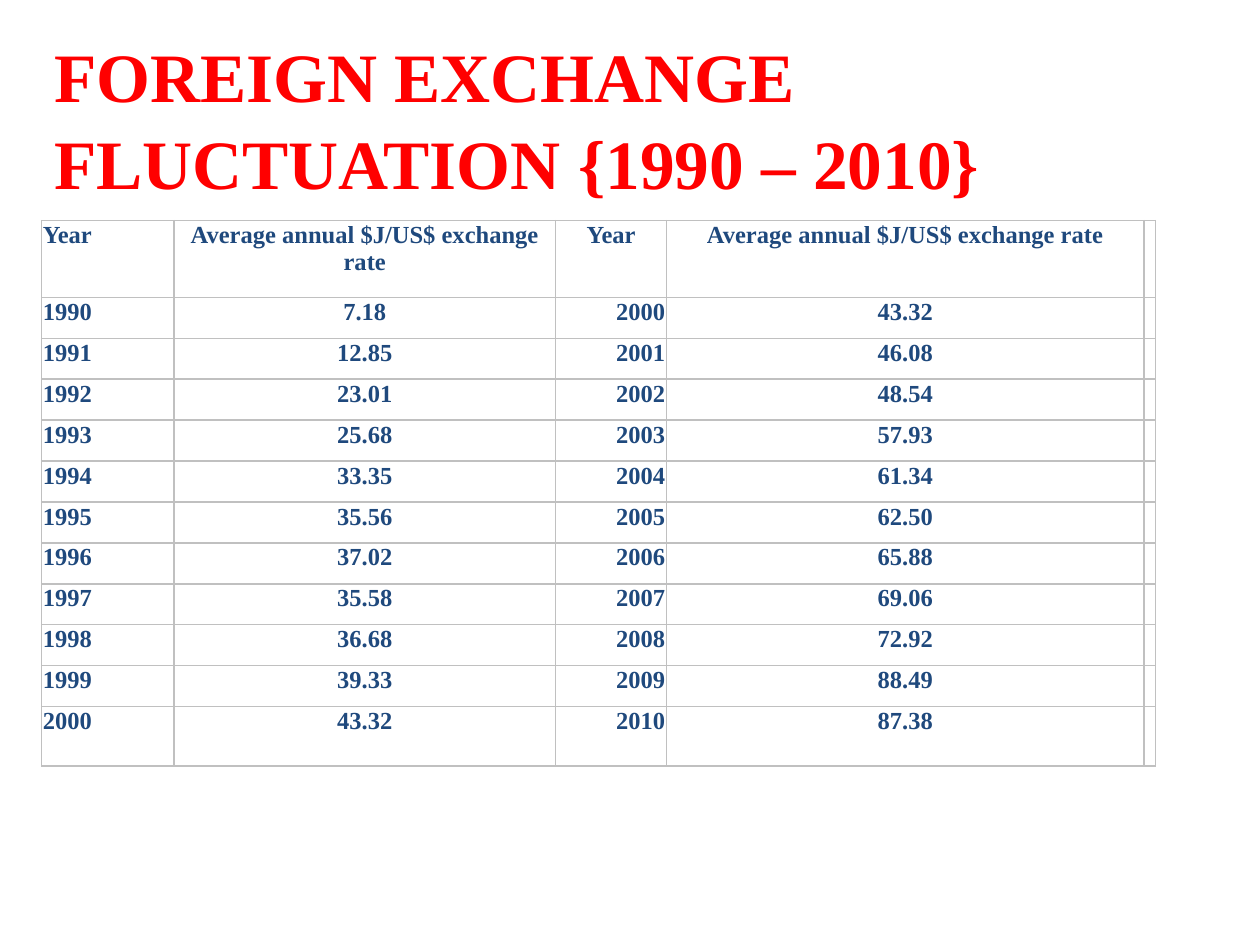
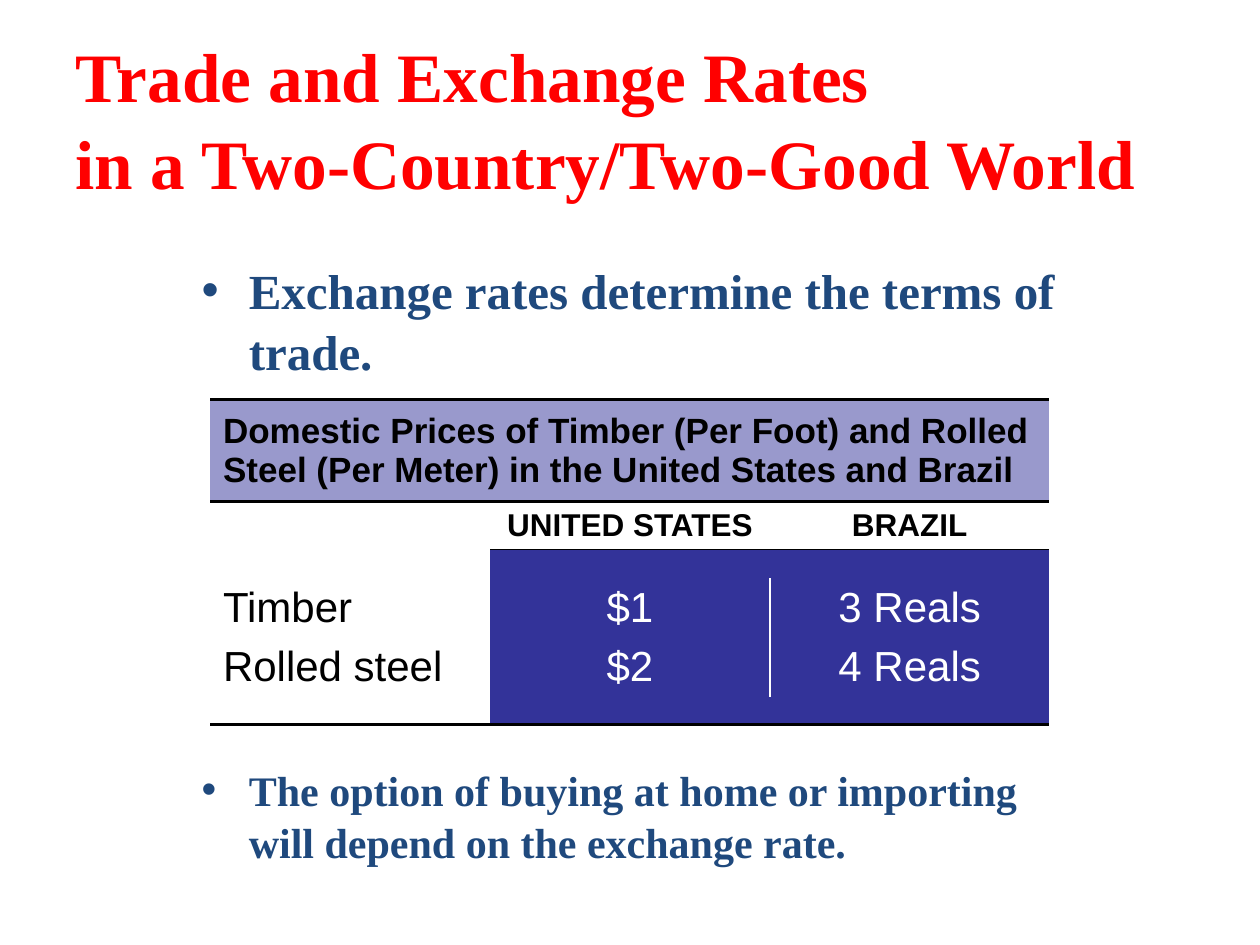
import lxml.etree
import pptx
import pptx.dml.color
import pptx.enum.text
import pptx.oxml.ns
import pptx.util

Inches = pptx.util.Inches
Pt = pptx.util.Pt
RGBColor = pptx.dml.color.RGBColor
Align = pptx.enum.text.PP_ALIGN
Anchor = pptx.enum.text.MSO_ANCHOR
qn = pptx.oxml.ns.qn

RED = RGBColor(0xFF, 0x00, 0x00)
NAVY = RGBColor(0x1F, 0x49, 0x7D)
GREY = RGBColor(0xC0, 0xC0, 0xC0)
BLACK = RGBColor(0x00, 0x00, 0x00)
WHITE = RGBColor(0xFF, 0xFF, 0xFF)
INDIGO = RGBColor(0x33, 0x33, 0x99)
LILAC = RGBColor(0x99, 0x99, 0xCC)
SERIF = "Times New Roman"
SANS = "Arial"
TITLE_ONLY, TWO_CONTENT = 5, 3
LINE_SPACING = 1.04

RATE_HEADER = "Average annual $J/US$ exchange rate"
RATES_1990S = ["7.18", "12.85", "23.01", "25.68", "33.35", "35.56",
               "37.02", "35.58", "36.68", "39.33", "43.32"]
RATES_2000S = ["43.32", "46.08", "48.54", "57.93", "61.34", "62.50",
               "65.88", "69.06", "72.92", "88.49", "87.38"]
PRICES = [
    ["Domestic Prices of Timber (Per Foot) and Rolled Steel (Per Meter) "
     "in the United States and Brazil", "", ""],
    ["", "UNITED STATES", "BRAZIL"],
    ["", "", ""],
    ["Timber", "$1", "3 Reals"],
    ["Rolled steel", "$2", "4 Reals"],
    ["", "", ""],
]


def style(para, name, size, color, bold=True):
    para.font.name = name
    para.font.size = Pt(size)
    para.font.color.rgb = color
    para.font.bold = bold


def fill_placeholder(shape, box, text, size, color):
    shape.left, shape.top, shape.width, shape.height = map(Inches, box)
    frame = shape.text_frame
    frame.word_wrap = True
    frame.auto_size = pptx.enum.text.MSO_AUTO_SIZE.NONE
    para = frame.paragraphs[0]
    para.text = text
    para.alignment = Align.LEFT
    para.line_spacing = LINE_SPACING
    style(para, SERIF, size, color)


def add_slide(deck, layout, title, box):
    page = deck.slides.add_slide(deck.slide_layouts[layout])
    fill_placeholder(page.shapes.title, box, title, 39.6, RED)
    page.shapes.title.text_frame.vertical_anchor = Anchor.MIDDLE
    return page


def add_plain_table(page, left, top, widths, heights):
    frame = page.shapes.add_table(
        len(heights), len(widths), Inches(left), Inches(top),
        Inches(sum(widths)), Inches(sum(heights)))
    table = frame.table
    table.first_row = table.horz_banding = False
    for column, width in zip(table.columns, widths):
        column.width = Inches(width)
    for row, height in zip(table.rows, heights):
        row.height = Inches(height)
    return table


def set_borders(cell, borders):
    """Draw the sides (L, R, T, B) given as (colour, points); hide the rest."""
    properties = cell._tc.get_or_add_tcPr()
    for side in "LRTB":
        color, width = borders.get(side, (None, 0))
        line = lxml.etree.SubElement(
            properties, qn("a:ln" + side), w=str(int(Pt(width))))
        if color is None:
            lxml.etree.SubElement(line, qn("a:noFill"))
        else:
            solid = lxml.etree.SubElement(line, qn("a:solidFill"))
            lxml.etree.SubElement(solid, qn("a:srgbClr"), val=str(color))


def set_margins(cell, side, vertical):
    cell.margin_left = cell.margin_right = Inches(side)
    cell.margin_top = cell.margin_bottom = Inches(vertical)


def write_cell(cell, text, alignment, name, size, color, bold=True):
    para = cell.text_frame.paragraphs[0]
    if text:
        para.text = text
        para.alignment = alignment
        style(para, name, size, color, bold)
    else:
        # A small end mark keeps an empty cell from stretching its row.
        lxml.etree.SubElement(para._p, qn("a:endParaRPr"), sz="800")


def add_rates_table(page, left, top):
    rows = [["Year", RATE_HEADER, "Year", RATE_HEADER, ""]]
    for index, (early, late) in enumerate(zip(RATES_1990S, RATES_2000S)):
        rows.append([str(1990 + index), early, str(2000 + index), late, ""])
    heights = [0.61] + [0.325] * 10 + [0.47]
    table = add_plain_table(
        page, left, top, [1.05, 3.03, 0.88, 3.79, 0.09], heights)
    alignments = [Align.LEFT, Align.CENTER, Align.RIGHT, Align.CENTER, Align.LEFT]
    for r, values in enumerate(rows):
        for c, text in enumerate(values):
            cell = table.cell(r, c)
            set_borders(cell, dict.fromkeys("LRTB", (GREY, 1)))
            cell.fill.background()
            set_margins(cell, 0.01, 0.01)
            alignment = Align.CENTER if r == 0 and c > 0 else alignments[c]
            write_cell(cell, text, alignment, SERIF, 14, NAVY)


def price_borders(r, c):
    thick, thin, divider = (BLACK, 2.25), (BLACK, 1), (WHITE, 1)
    borders = {}
    if r in (0, 1):
        borders["T"] = thick
    if r in (0, len(PRICES) - 1):
        borders["B"] = thick
    if c > 0 and r in (1, 2):
        borders["B" if r == 1 else "T"] = thin
    if c > 0 and r in (3, 4):
        borders["R" if c == 1 else "L"] = divider
    return borders


def add_price_table(page, left, top):
    table = add_plain_table(
        page, left, top, [2.22] * 3, [0.81, 0.38, 0.23, 0.47, 0.47, 0.22])
    sizes = [20, 18, 18, 24, 24, 24]
    for r, values in enumerate(PRICES):
        for c, text in enumerate(values):
            cell = table.cell(r, c)
            on_indigo = r > 1 and c > 0
            set_borders(cell, price_borders(r, c))
            cell.fill.solid()
            cell.fill.fore_color.rgb = (
                LILAC if r == 0 else INDIGO if on_indigo else WHITE)
            set_margins(cell, 0.1, 0.04)
            cell.vertical_anchor = Anchor.MIDDLE
            write_cell(cell, text, Align.CENTER if c else Align.LEFT, SANS,
                       sizes[r], WHITE if on_indigo else BLACK, bold=r < 2)
    table.cell(0, 0).merge(table.cell(0, 2))
    table.cell(1, 0).merge(table.cell(2, 0))


def build_fluctuation_slide(deck):
    page = add_slide(deck, TITLE_ONLY,
                     "FOREIGN EXCHANGE FLUCTUATION {1990 – 2010}",
                     (0.33, 0.3, 8.83, 1.25))
    add_rates_table(page, 0.33, 1.75)


def build_trade_slide(deck):
    page = add_slide(
        deck, TWO_CONTENT,
        "Trade and Exchange Rates\nin a Two-Country/Two-Good World",
        (0.5, 0.3, 9, 1.25))
    fill_placeholder(page.placeholders[1], (1.5, 2, 7, 1),
                     "Exchange rates determine the terms of trade.", 28, NAVY)
    fill_placeholder(page.placeholders[2], (1.5, 6, 7, 1.08),
                     "The option of buying at home or importing will depend "
                     "on the exchange rate.", 24, NAVY)
    add_price_table(page, 1.67, 3.17)


def main():
    deck = pptx.Presentation()
    deck.slide_width, deck.slide_height = Inches(10), Inches(7.5)
    build_fluctuation_slide(deck)
    build_trade_slide(deck)
    deck.save("out.pptx")


if __name__ == "__main__":
    main()
